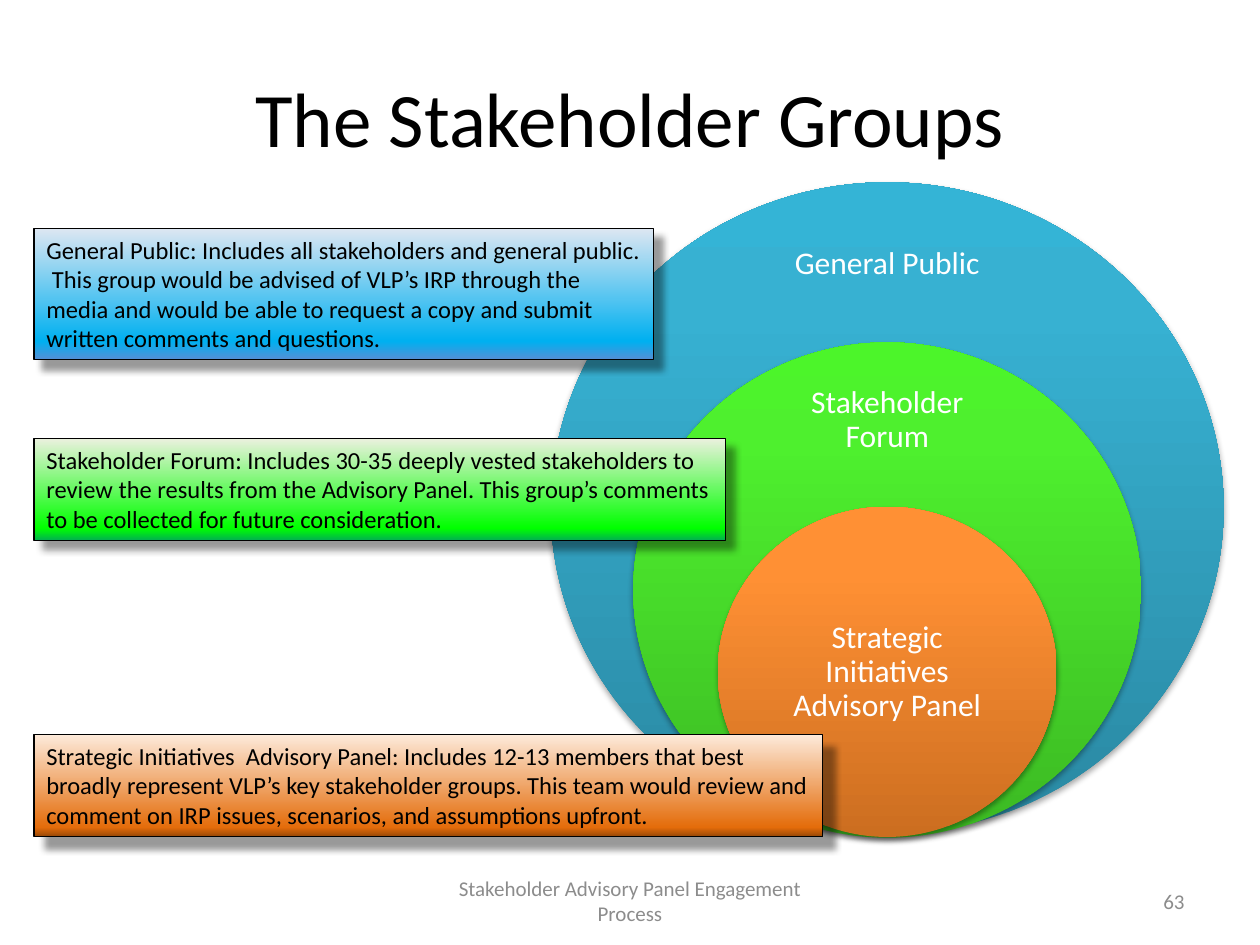
"""Build the stakeholder groups slide: three nested circles with three notes."""
import dataclasses

import lxml.etree
import pptx
import pptx.dml.color
import pptx.enum.shapes
import pptx.enum.text
import pptx.oxml.ns
import pptx.util

Pt = pptx.util.Pt
Shape = pptx.enum.shapes.MSO_SHAPE
Align = pptx.enum.text.PP_ALIGN
Anchor = pptx.enum.text.MSO_ANCHOR


@dataclasses.dataclass(frozen=True)
class Theme:
    font: str = "Calibri"
    black: str = "000000"
    white: str = "FFFFFF"
    gray: str = "8C8C8C"
    title: int = 44
    label: int = 18
    note: int = 14
    foot: int = 12
    rings: tuple = (
        ((0, "2A88A2"), (80, "37B1D2"), (100, "34B4D6")),
        ((0, "3CB923"), (80, "4EF02E"), (100, "4CF52A")),
        ((0, "CC6E20"), (80, "FF9034"), (100, "FF9136")),
    )
    blue: tuple = ((0, "DCE6F2"), (86, "00B0F0"), (100, "558ED5"))
    orange: tuple = ((0, "FDEADA"), (91, "E46C0A"), (100, "984807"))
    green: tuple = ((0, "EBF1DE"), (88, "00FF00"), (100, "00B050"))


def color(code):
    return pptx.dml.color.RGBColor.from_string(code)


def node(base, tag, **attrs):
    values = {key: str(value) for key, value in attrs.items()}
    return lxml.etree.SubElement(base, pptx.oxml.ns.qn(tag), values)


def write(frame, text, font, size, ink, align=Align.CENTER,
          anchor=Anchor.MIDDLE, inset=None, space=None):
    frame.word_wrap = True
    frame.vertical_anchor = anchor
    if inset is not None:
        frame.margin_left = frame.margin_right = Pt(inset)
        frame.margin_top = frame.margin_bottom = Pt(inset)
    para = frame.paragraphs[0]
    para.alignment = align
    if space is not None:
        para.line_spacing = space
    run = para.add_run()
    run.text = text
    run.font.name = font
    run.font.size = Pt(size)
    run.font.color.rgb = color(ink)


class Deck:
    def __init__(self, theme):
        self.theme = theme
        self.file = pptx.Presentation()
        self.file.slide_width, self.file.slide_height = Pt(720), Pt(540)
        self.slide = self.file.slides.add_slide(self.file.slide_layouts[6])

    def text(self, box, text, size, ink, **form):
        shape = self.slide.shapes.add_textbox(*map(Pt, box))
        write(shape.text_frame, text, self.theme.font, size, ink, **form)

    def shape(self, kind, box, stops, angle, shade, edge=None):
        shape = self.slide.shapes.add_shape(kind, *map(Pt, box))
        props = shape._element.spPr
        grad = node(props, "a:gradFill", rotWithShape=1)
        steps = node(grad, "a:gsLst")
        for place, code in stops:
            node(node(steps, "a:gs", pos=place * 1000), "a:srgbClr", val=code)
        node(grad, "a:lin", ang=angle * 60000, scaled=0)
        if edge:
            shape.line.color.rgb = color(edge)
            shape.line.width = Pt(0.75)
        else:
            shape.line.fill.background()
        shape.shadow.inherit = False
        alpha, blur, dist, turn = shade
        cast = node(props.find(pptx.oxml.ns.qn("a:effectLst")), "a:outerShdw",
                    blurRad=Pt(blur), dist=Pt(dist), dir=turn * 60000,
                    algn="tl", rotWithShape=0)
        tint = node(cast, "a:srgbClr", val=self.theme.black)
        node(tint, "a:alpha", val=alpha * 1000)
        return shape

    def ring(self, oval, stops, text, label):
        mid = 507
        top, wide, high = oval
        self.shape(Shape.OVAL, (mid - wide / 2, top, wide, high),
                   stops, 270, (35, 3.1, 1.8, 90))
        top, wide, high = label
        self.text((mid - wide / 2, top, wide, high), text, self.theme.label,
                  self.theme.white, inset=10, space=0.9)

    def note(self, top, size, stops, dist, text):
        theme = self.theme
        shape = self.shape(Shape.RECTANGLE, (19.4, top, *size), stops, 90,
                           (40, 4, dist, 45), theme.black)
        write(shape.text_frame, text, theme.font, theme.note, theme.black,
              align=Align.LEFT, anchor=Anchor.TOP)
        shape.text_frame.auto_size = pptx.enum.text.MSO_AUTO_SIZE.SHAPE_TO_FIT_TEXT


def main():
    theme = Theme()
    deck = Deck(theme)
    deck.text((36, 21.6, 648, 90), "The Stakeholder Groups", theme.title, theme.black)
    deck.text((246, 500.4, 228, 28.8), "Stakeholder Advisory Panel Engagement Process",
              theme.foot, theme.gray)
    deck.text((516, 500.4, 168, 28.8), "63", theme.foot, theme.gray, align=Align.RIGHT)

    rings = (
        ((104.2, 384.5, 372.2), "General Public", (122.9, 134.6, 56.2)),
        ((195.7, 290.2, 283), "Stakeholder Forum", (213.4, 135.4, 53.3)),
        ((289.6, 193.7, 188.7), "Strategic Initiatives Advisory Panel",
         (337, 136.8, 94.3)),
    )
    for (oval, text, label), stops in zip(rings, theme.rings):
        deck.ring(oval, stops, text, label)

    deck.note(130.8, (354.2, 74.9), theme.blue, 7,
              "General Public: Includes all stakeholders and general public.  This group "
              "would be advised of VLP’s IRP through the media and would be able to "
              "request a copy and submit written comments and questions.")
    deck.note(419.8, (450.7, 58.3), theme.orange, 9,
              "Strategic Initiatives  Advisory Panel: Includes 12-13 members that best "
              "broadly represent VLP’s key stakeholder groups. This team would review "
              "and comment on IRP issues, scenarios, and assumptions upfront.")
    deck.note(250.6, (395.3, 58.3), theme.green, 7,
              "Stakeholder Forum: Includes 30-35 deeply vested stakeholders to review "
              "the results from the Advisory Panel. This group’s comments to be "
              "collected for future consideration.")
    deck.file.save("out.pptx")


if __name__ == "__main__":
    main()
